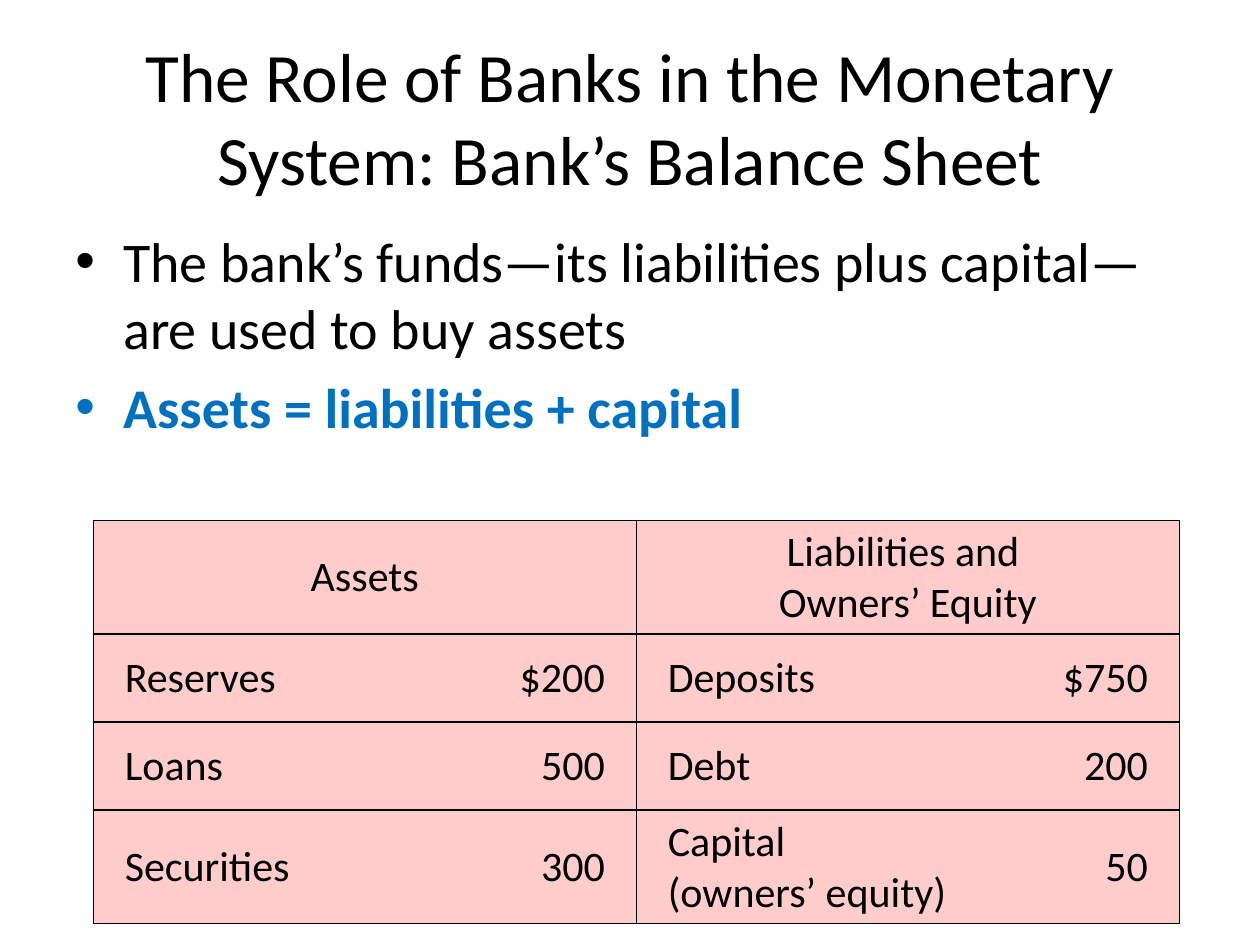
from dataclasses import dataclass

from lxml.etree import SubElement
from pptx import Presentation
from pptx.dml.color import RGBColor
from pptx.enum.text import MSO_ANCHOR, PP_ALIGN
from pptx.oxml.ns import qn
from pptx.util import Inches, Pt


@dataclass(frozen=True)
class Theme:
    font: str = "Calibri"
    ink: str = "000000"
    accent: str = "0070C0"
    cell: str = "FFCCCC"
    title_size: float = 39.6
    body_size: float = 32
    table_size: float = 24
    border: float = 1


class SlideBuilder:
    def __init__(self, slide, theme):
        self.slide = slide
        self.theme = theme

    def style(self, paragraph, size, color, bold=False, align=PP_ALIGN.LEFT):
        paragraph.alignment = align
        font = paragraph.font
        font.name, font.size, font.bold = self.theme.font, Pt(size), bold
        font.color.rgb = RGBColor.from_string(color)

    def text_frame(self, left, top, width, height, anchor):
        box = self.slide.shapes.add_textbox(
            Inches(left), Inches(top), Inches(width), Inches(height))
        frame = box.text_frame
        frame.word_wrap = True
        frame.vertical_anchor = anchor
        return frame

    def title(self, text, *place):
        paragraph = self.text_frame(*place, MSO_ANCHOR.MIDDLE).paragraphs[0]
        paragraph.text = text
        self.style(paragraph, self.theme.title_size, self.theme.ink,
                   align=PP_ALIGN.CENTER)

    def bullets(self, points, *place):
        """Add points given as (text, color, bold)."""
        frame = self.text_frame(*place, MSO_ANCHOR.TOP)
        for index, (text, color, bold) in enumerate(points):
            paragraph = frame.add_paragraph() if index else frame.paragraphs[0]
            paragraph.text = text
            self.style(paragraph, self.theme.body_size, color, bold)
            paragraph.space_before = Pt(0.2 * self.theme.body_size)
            properties = paragraph._p.get_or_add_pPr()
            properties.set("marL", str(Inches(0.38)))
            properties.set("indent", str(-Inches(0.38)))
            bullet_font = SubElement(properties, qn("a:buFont"))
            bullet_font.set("typeface", "Arial")
            SubElement(properties, qn("a:buChar")).set("char", "•")
            # The default run properties follow the bullet in the schema.
            properties.append(properties.find(qn("a:defRPr")))

    def borders(self, cell, visible):
        properties = cell._tc.get_or_add_tcPr()
        for side in "LRTB":
            line = SubElement(properties, qn(f"a:ln{side}"))
            line.set("w", str(Pt(self.theme.border)))
            if side in visible:
                fill = SubElement(line, qn("a:solidFill"))
                SubElement(fill, qn("a:srgbClr")).set("val", self.theme.ink)
            else:
                SubElement(line, qn("a:noFill"))

    def cell(self, cell, text, align, side_margin, visible):
        self.borders(cell, visible)
        cell.fill.solid()
        cell.fill.fore_color.rgb = RGBColor.from_string(self.theme.cell)
        cell.margin_left = cell.margin_right = Inches(side_margin)
        cell.margin_top = cell.margin_bottom = Inches(0.05)
        cell.vertical_anchor = MSO_ANCHOR.MIDDLE
        paragraph = cell.text_frame.paragraphs[0]
        paragraph.text = text
        self.style(paragraph, self.theme.table_size, self.theme.ink, align=align)

    def balance_sheet(self, headings, entries, left, top, widths, heights):
        """Add a table with one label and amount column pair per heading."""
        table = self.slide.shapes.add_table(
            len(heights), len(widths), Inches(left), Inches(top),
            Inches(sum(widths)), Inches(sum(heights))).table
        for column, width in zip(table.columns, widths):
            column.width = Inches(width)
        for row, height in zip(table.rows, heights):
            row.height = Inches(height)

        for index, heading in enumerate(headings):
            first, second = table.cell(0, 2 * index), table.cell(0, 2 * index + 1)
            first.merge(second)
            self.cell(first, heading, PP_ALIGN.CENTER, 0.1, "LRTB")
            self.borders(second, "RTB")

        for row, values in enumerate(entries, start=1):
            for column, value in enumerate(values):
                is_amount = column % 2
                self.cell(table.cell(row, column), value,
                          PP_ALIGN.RIGHT if is_amount else PP_ALIGN.LEFT,
                          0.25, "RTB" if is_amount else "LTB")


def main():
    presentation = Presentation()
    presentation.slide_width, presentation.slide_height = Inches(10), Inches(7.5)
    theme = Theme()
    slide = presentation.slides.add_slide(presentation.slide_layouts[6])
    builder = SlideBuilder(slide, theme)

    builder.title("The Role of Banks in the Monetary System: Bank’s Balance Sheet",
                  0.5, 0.3, 9, 1.25)
    builder.bullets([
        ("The bank’s funds—its liabilities plus capital—are used to buy assets",
         theme.ink, False),
        ("Assets = liabilities + capital", theme.accent, True),
    ], 0.5, 1.75, 9, 4.95)
    builder.balance_sheet(
        ["Assets", "Liabilities and \vOwners’ Equity"],
        [
            ("Reserves", "$200", "Deposits", "$750"),
            ("Loans", "500", "Debt", "200"),
            ("Securities", "300", "Capital \v(owners’ equity)", "50"),
        ],
        left=0.74, top=4.13,
        widths=[2.81, 1.5, 2.88, 1.43], heights=[0.9, 0.7, 0.7, 0.9])

    presentation.save("out.pptx")


if __name__ == "__main__":
    main()
